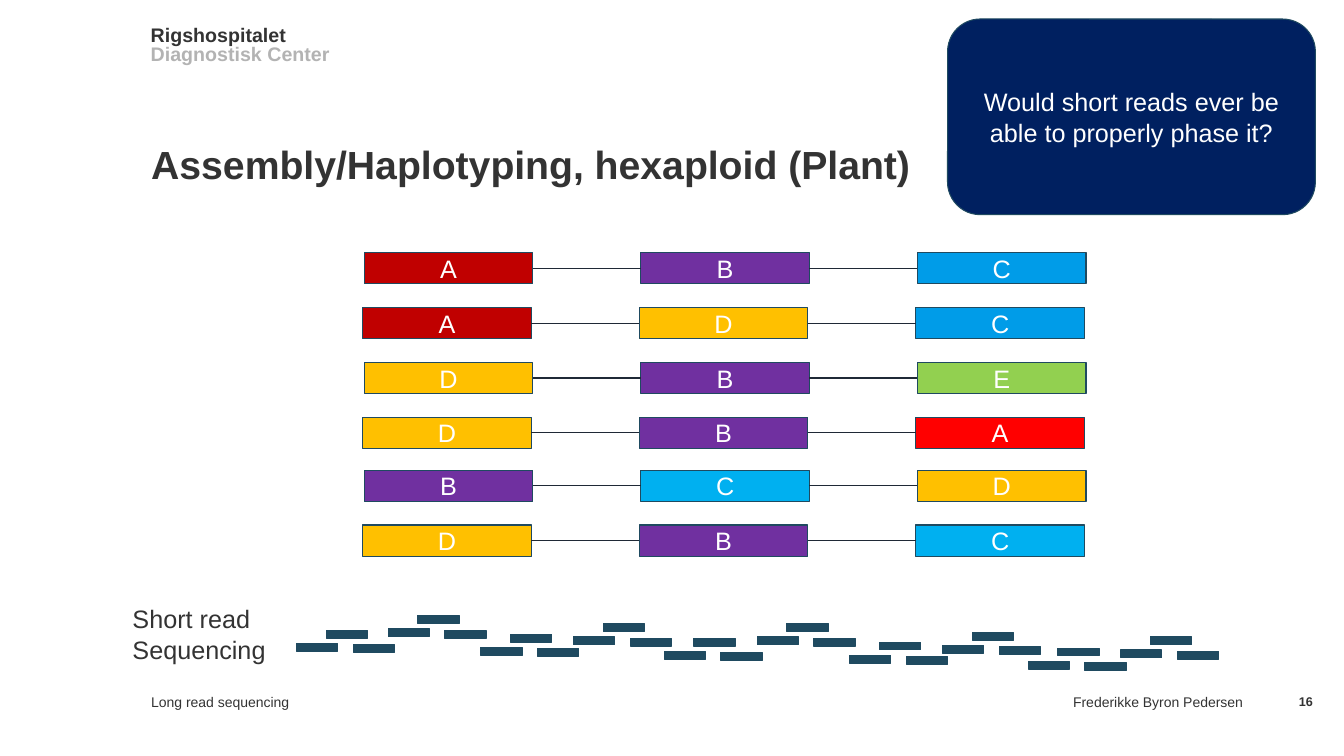
from pptx import Presentation
from pptx.dml.color import RGBColor
from pptx.enum.shapes import MSO_CONNECTOR, MSO_SHAPE
from pptx.enum.text import MSO_ANCHOR, PP_ALIGN
from pptx.oxml.ns import qn
from pptx.util import Cm, Pt
from lxml import etree

RECTANGLE, ROUNDED = MSO_SHAPE.RECTANGLE, MSO_SHAPE.ROUNDED_RECTANGLE
STRAIGHT = MSO_CONNECTOR.STRAIGHT
LEFT, CENTER, RIGHT = PP_ALIGN.LEFT, PP_ALIGN.CENTER, PP_ALIGN.RIGHT
TOP, MIDDLE, BOTTOM = MSO_ANCHOR.TOP, MSO_ANCHOR.MIDDLE, MSO_ANCHOR.BOTTOM

WHITE = RGBColor(0xFF, 0xFF, 0xFF)
TEXT = RGBColor(0x33, 0x33, 0x33)
GRAY = RGBColor(0xB3, 0xB3, 0xB3)
TEAL = RGBColor(0x1F, 0x4A, 0x60)
LINK = RGBColor(0x1F, 0x29, 0x36)
NAVY = RGBColor(0x00, 0x20, 0x60)
DARK_RED = RGBColor(0xC0, 0x00, 0x00)
RED = RGBColor(0xFF, 0x00, 0x00)
PURPLE = RGBColor(0x70, 0x30, 0xA0)
BLUE = RGBColor(0x00, 0x9C, 0xE8)
SKY = RGBColor(0x00, 0xB0, 0xF0)
AMBER = RGBColor(0xFF, 0xC0, 0x00)
GREEN = RGBColor(0x92, 0xD0, 0x50)

presentation = Presentation()
presentation.slide_width = Cm(33.87)
presentation.slide_height = Cm(19.05)
slide = presentation.slides.add_slide(presentation.slide_layouts[6])


def add_text(text, left, top, width, height, shape=None, size=18, color=TEXT,
             bold=False, align=LEFT, anchor=TOP, spacing=1.0):
    if shape is None:
        shape = slide.shapes.add_textbox(Cm(left), Cm(top), Cm(width), Cm(height))
    frame = shape.text_frame
    frame.word_wrap = True
    frame.vertical_anchor = anchor
    frame.margin_left = frame.margin_right = frame.margin_top = frame.margin_bottom = 0
    paragraph = frame.paragraphs[0]
    paragraph.text = text
    paragraph.alignment = align
    paragraph.line_spacing = spacing
    paragraph.font.name = "Arial"
    paragraph.font.size = Pt(size)
    paragraph.font.bold = bold
    paragraph.font.color.rgb = color


def add_box(left, top, width, height, fill, kind=RECTANGLE, text=None):
    shape = slide.shapes.add_shape(kind, Cm(left), Cm(top), Cm(width), Cm(height))
    shape.shadow.inherit = False
    shape.fill.solid()
    shape.fill.fore_color.rgb = fill
    shape.line.color.rgb = TEAL
    shape.line.width = Pt(0.75)
    if text:
        add_text(text, left, top, width, height, shape=shape, color=WHITE,
                 align=CENTER, anchor=MIDDLE)


add_text("Rigshospitalet", 3.8, 0.58, 17, 0.6, size=14, bold=True)
add_text("Diagnostisk Center", 3.8, 1.05, 17, 1.17, size=14, bold=True, color=GRAY)
add_text("Assembly/Haplotyping, hexaploid (Plant)", 3.81, 2.41, 28.17, 2.31,
         size=28, bold=True, anchor=BOTTOM, spacing=0.85)
add_text("Long read sequencing", 3.81, 17.48, 10.5, 0.5, size=10)
add_text("Frederikke Byron Pedersen", 21.92, 17.48, 9.4, 0.5, size=10, align=RIGHT)
add_text("16", 31.96, 17.48, 1.9, 0.5, size=9, bold=True, align=CENTER)

HAPLOTYPES = [
    (9.18, 6.36, [("A", DARK_RED), ("B", PURPLE), ("C", BLUE)]),
    (9.14, 7.75, [("A", DARK_RED), ("D", AMBER), ("C", BLUE)]),
    (9.18, 9.13, [("D", AMBER), ("B", PURPLE), ("E", GREEN)]),
    (9.14, 10.51, [("D", AMBER), ("B", PURPLE), ("A", RED)]),
    (9.18, 11.85, [("B", PURPLE), ("C", SKY), ("D", AMBER)]),
    (9.14, 13.23, [("D", AMBER), ("B", PURPLE), ("C", SKY)]),
]
BLOCK_WIDTH, BLOCK_HEIGHT, BLOCK_PITCH = 4.25, 0.79, 6.97

for row_left, top, blocks in HAPLOTYPES:
    for column, (allele, color) in enumerate(blocks):
        left = row_left + column * BLOCK_PITCH
        add_box(left, top, BLOCK_WIDTH, BLOCK_HEIGHT, color, text=allele)
        if column:
            middle = Cm(top + BLOCK_HEIGHT / 2)
            connector = slide.shapes.add_connector(
                STRAIGHT, Cm(left - BLOCK_PITCH + BLOCK_WIDTH), middle, Cm(left), middle)
            connector.line.color.rgb = LINK
            connector.line.width = Pt(0.75)
            etree.SubElement(connector._element.spPr, qn("a:effectLst"))

READ_GROUPS = [
    (7.47, 16.21), (9.78, 15.85), (12.12, 16.31), (14.45, 16.05), (16.74, 16.41),
    (19.08, 16.05), (21.41, 16.51), (23.75, 16.26), (25.91, 16.66), (28.24, 16.38),
]
READ_OFFSETS = [(0, 0), (0.75, -0.33), (1.43, 0.03)]

for group_left, group_top in READ_GROUPS:
    for shift_right, shift_down in READ_OFFSETS:
        add_box(group_left + shift_right, group_top + shift_down, 1.04, 0.2, TEAL)

add_text("Short read Sequencing", 3.34, 15.21, 5.3, 1.02)
add_box(23.88, 0.48, 9.27, 4.93, NAVY, kind=ROUNDED,
        text="Would short reads ever be able to properly phase it?")

presentation.save("out.pptx")
